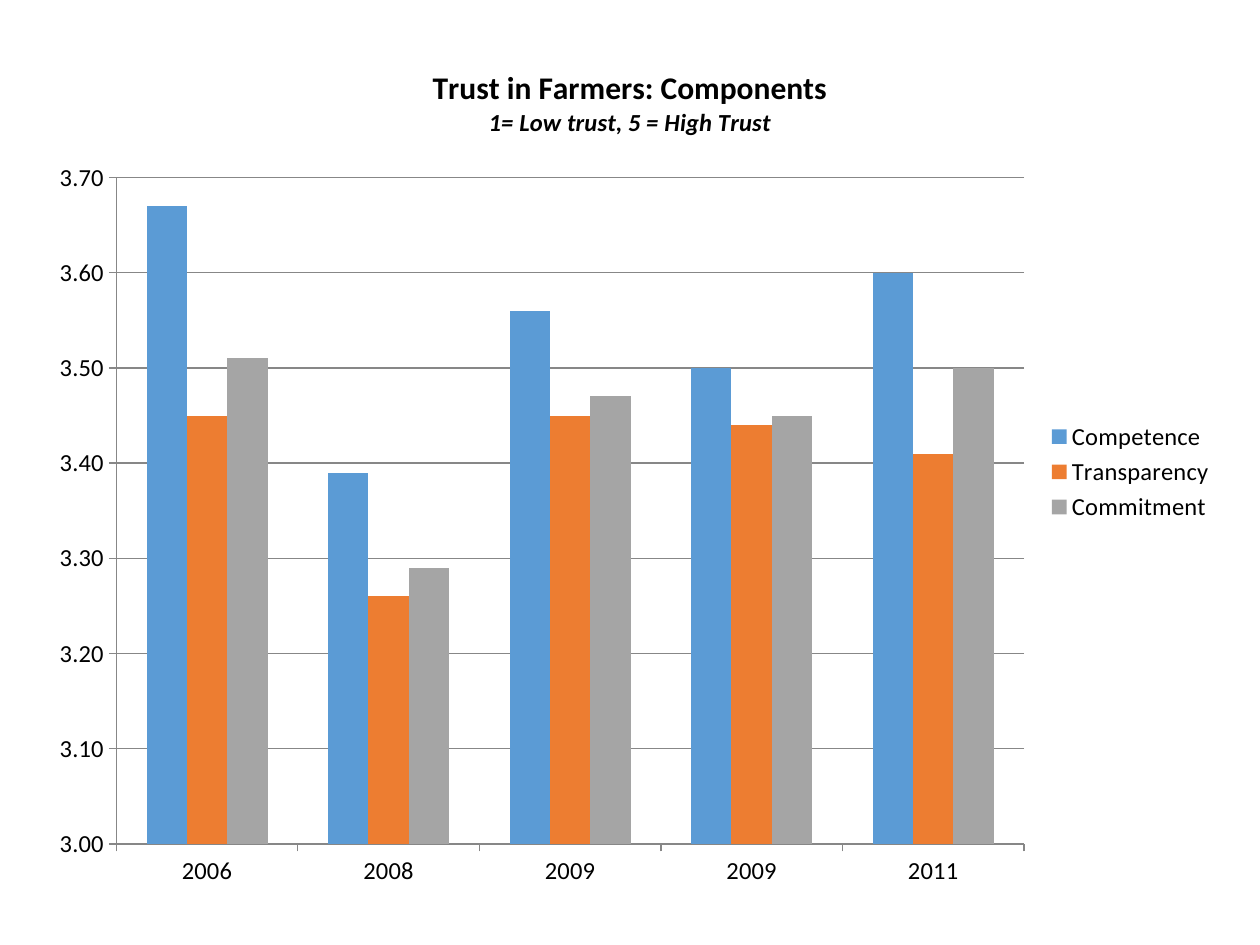
import pptx
import pptx.chart.data
import pptx.dml.color
import pptx.enum.chart
import pptx.oxml
import pptx.util

Inches = pptx.util.Inches
COLORS = {
    "text": "000000",
    "line": "878787",
    "Competence": "5B9BD5",
    "Transparency": "ED7D31",
    "Commitment": "A5A5A5",
}
TRUST = {
    "Competence": (3.67, 3.39, 3.56, 3.50, 3.60),
    "Transparency": (3.45, 3.26, 3.45, 3.44, 3.41),
    "Commitment": (3.51, 3.29, 3.47, 3.45, 3.50),
}
PLOT_FRAME = {"x": 0.07, "y": 0.16, "w": 0.76, "h": 0.77}


def rgb(name):
    return pptx.dml.color.RGBColor.from_string(COLORS[name])


def style_font(font, **formats):
    font.color.rgb = rgb("text")
    for name, value in ({"name": "Calibri", "size": pptx.util.Pt(14)} | formats).items():
        setattr(font, name, value)


deck = pptx.Presentation()
deck.slide_width, deck.slide_height = Inches(10), Inches(7.5)
page = deck.slides.add_slide(deck.slide_layouts[6])

data = pptx.chart.data.CategoryChartData(number_format="0.00")
data.categories = ["2006", "2008", "2009", "2009", "2011"]
for name, values in TRUST.items():
    data.add_series(name, values)
chart = page.shapes.add_chart(
    pptx.enum.chart.XL_CHART_TYPE.COLUMN_CLUSTERED,
    Inches(0.26), Inches(0.31), Inches(9.48), Inches(6.87), data,
).chart
style_font(chart.font)

chart.has_title = True
chart.chart_title.include_in_layout = False
title = chart.chart_title.text_frame
lines = (
    ("Trust in Farmers: Components", {"size": pptx.util.Pt(18), "bold": True, "italic": False}),
    ("1= Low trust, 5 = High Trust", {"bold": True, "italic": True}),
)
for index, (text, formats) in enumerate(lines):
    para = title.add_paragraph() if index else title.paragraphs[0]
    span = para.add_run()
    span.text = text
    style_font(span.font, **formats)

plot = chart.plots[0]
for name, value in {"gap_width": 150, "overlap": 0, "vary_by_categories": False}.items():
    setattr(plot, name, value)
for series in plot.series:
    series.format.fill.solid()
    series.format.fill.fore_color.rgb = rgb(series.name)

value_axis = chart.value_axis
value_formats = {
    "minimum_scale": 3.0,
    "maximum_scale": 3.7,
    "major_unit": 0.1,
    "has_major_gridlines": True,
}
for name, value in value_formats.items():
    setattr(value_axis, name, value)
value_axis.tick_labels.number_format = "0.00"
value_axis.tick_labels.number_format_is_linked = False
for axis in (chart.category_axis, value_axis):
    axis.major_tick_mark = pptx.enum.chart.XL_TICK_MARK.OUTSIDE
    style_font(axis.tick_labels.font)
for part in (chart.category_axis, value_axis, value_axis.major_gridlines):
    part.format.line.color.rgb = rgb("line")
    part.format.line.width = pptx.util.Pt(0.75)

chart.has_legend = True
chart.legend.position = pptx.enum.chart.XL_LEGEND_POSITION.RIGHT
chart.legend.include_in_layout = False
style_font(chart.legend.font)

plot_area = chart.element.find(".//" + pptx.oxml.ns.qn("c:plotArea"))
for layout in plot_area.findall(pptx.oxml.ns.qn("c:layout")):
    plot_area.remove(layout)
modes = "".join(f'<c:{key}Mode val="edge"/>' for key in "xy")
sizes = "".join(f'<c:{key} val="{value}"/>' for key, value in PLOT_FRAME.items())
plot_area.insert(0, pptx.oxml.parse_xml(
    f'<c:layout {pptx.oxml.ns.nsdecls("c")}><c:manualLayout>'
    f'<c:layoutTarget val="inner"/>{modes}{sizes}</c:manualLayout></c:layout>'
))

deck.save("out.pptx")
